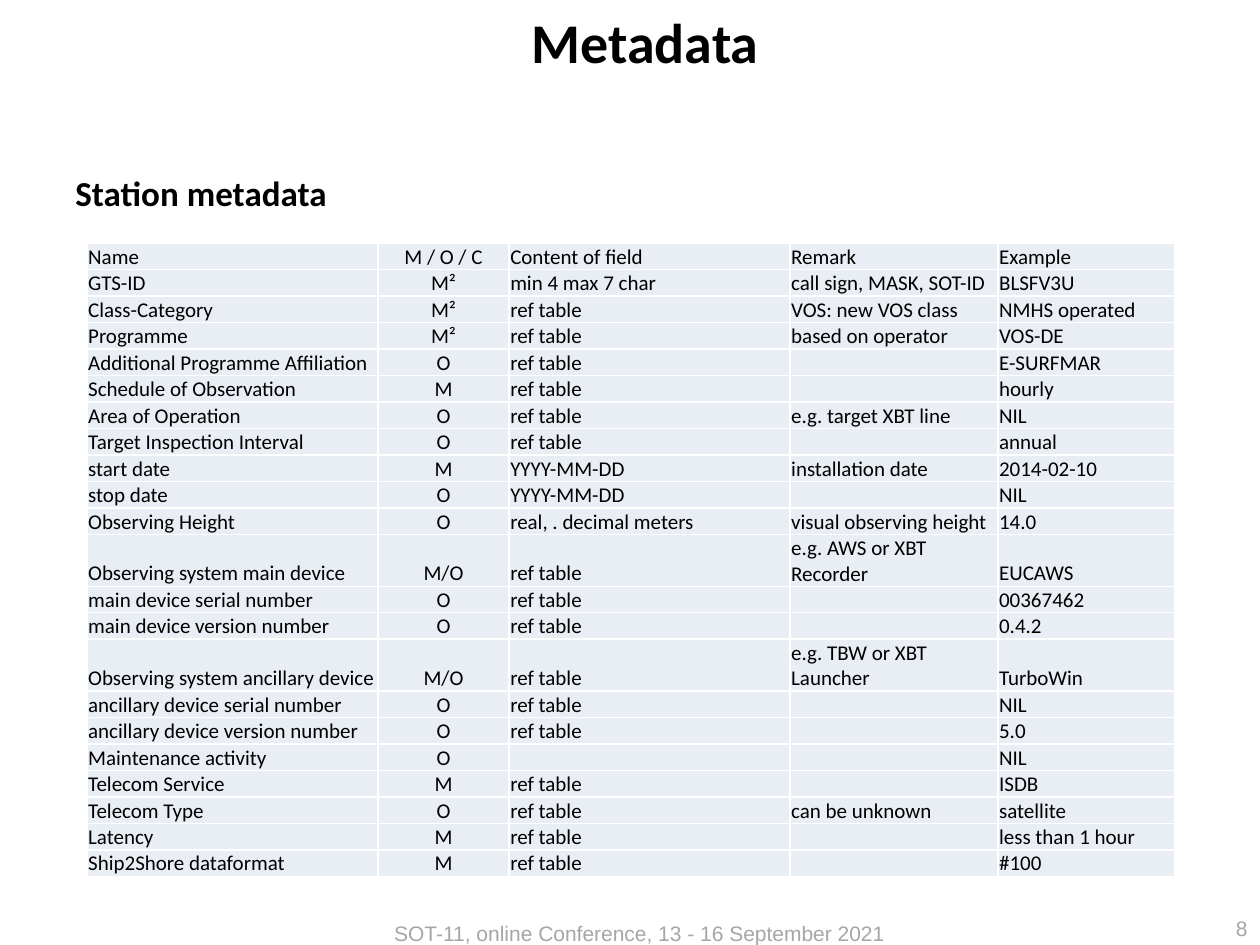
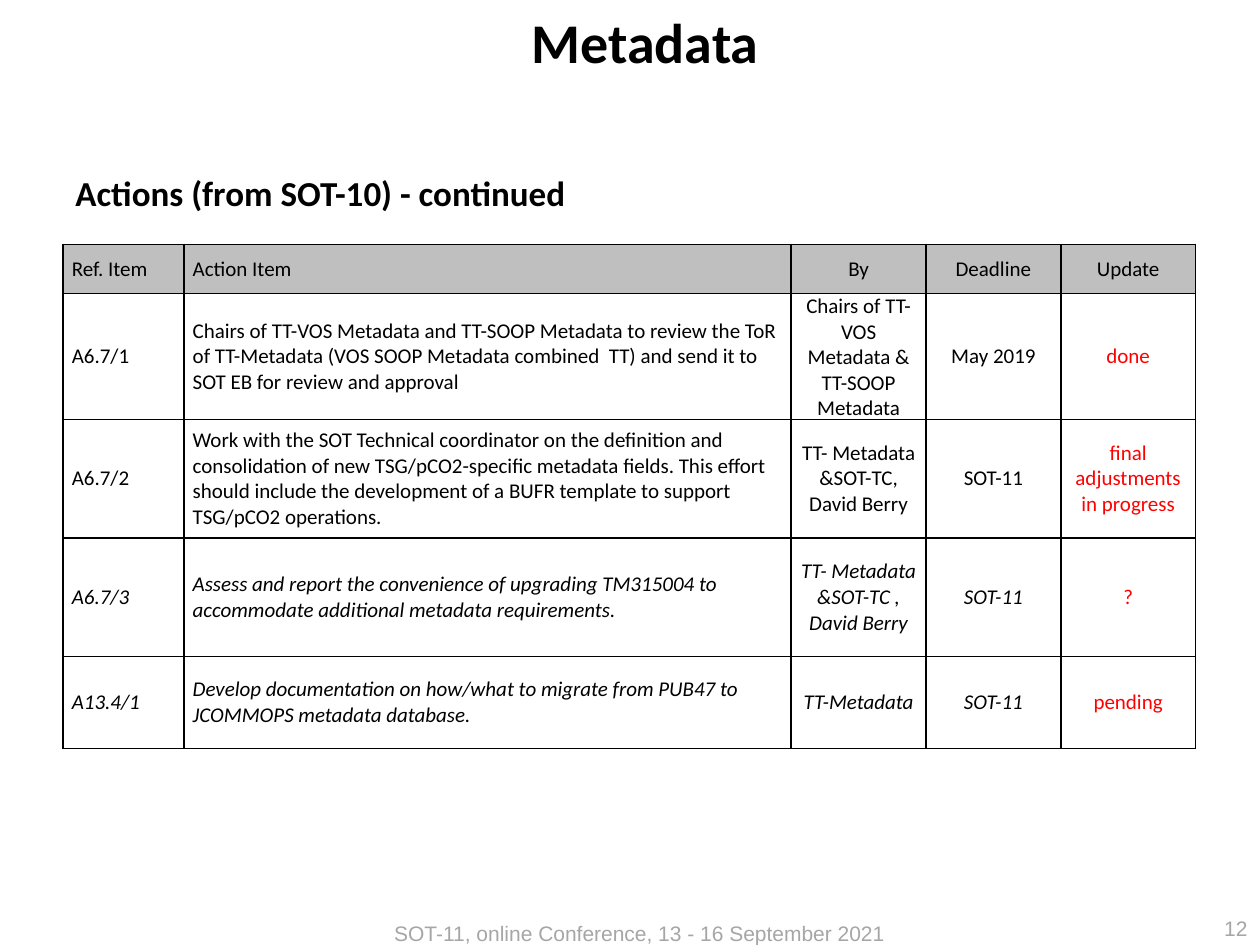
from dataclasses import dataclass

from lxml.etree import SubElement
from pptx import Presentation
from pptx.dml.color import RGBColor as RGB
from pptx.enum.text import MSO_ANCHOR as Anchor, MSO_AUTO_SIZE as Fit, PP_ALIGN as Align
from pptx.oxml.ns import qn
from pptx.util import Inches, Pt


@dataclass(frozen=True)
class Theme:
    ink: str = "000000"
    gray: str = "A6A6A6"
    red: str = "FF0000"
    pale: str = "E9EDF4"
    head: str = "BFBFBF"
    white: str = "FFFFFF"
    main: str = "Calibri"
    foot: str = "Arial"
    big: int = 32
    mid: int = 20
    small: int = 12


LOOK = Theme()
TITLE = "Metadata"
FOOTER = "SOT-11, online Conference, 13 - 16 September 2021"
SIDES = {"l": Align.LEFT, "c": Align.CENTER, "r": Align.RIGHT}

REF = "ref table"
STATION = [
    ("Name", "M / O / C", "Content of field", "Remark", "Example"),
    ("GTS-ID", "M²", "min 4 max 7 char", "call sign, MASK, SOT-ID", "BLSFV3U"),
    ("Class-Category", "M²", REF, "VOS: new VOS class", "NMHS operated"),
    ("Programme", "M²", REF, "based on operator", "VOS-DE"),
    ("Additional Programme Affiliation", "O", REF, "", "E-SURFMAR"),
    ("Schedule of Observation", "M", REF, "", "hourly"),
    ("Area of Operation", "O", REF, "e.g. target XBT line", "NIL"),
    ("Target Inspection Interval", "O", REF, "", "annual"),
    ("start date", "M", "YYYY-MM-DD", "installation date", "2014-02-10"),
    ("stop date", "O", "YYYY-MM-DD", "", "NIL"),
    ("Observing Height", "O", "real, . decimal meters", "visual observing height", "14.0"),
    ("Observing system main device", "M/O", REF, "e.g. AWS or XBT Recorder", "EUCAWS"),
    ("main device serial number", "O", REF, "", "00367462"),
    ("main device version number", "O", REF, "", "0.4.2"),
    ("Observing system ancillary device", "M/O", REF, "e.g. TBW or XBT Launcher", "TurboWin"),
    ("ancillary device serial number", "O", REF, "", "NIL"),
    ("ancillary device version number", "O", REF, "", "5.0"),
    ("Maintenance activity", "O", "", "", "NIL"),
    ("Telecom Service", "M", REF, "", "ISDB"),
    ("Telecom Type", "O", REF, "can be unknown", "satellite"),
    ("Latency", "M", REF, "", "less than 1 hour"),
    ("Ship2Shore dataformat", "M", REF, "", "#100"),
]
ACTIONS = [
    ("Ref. Item", "Action Item", "By", "Deadline", "Update"),
    ("A6.7/1",
     "Chairs of TT-VOS Metadata and TT-SOOP Metadata to review the ToR of TT-Metadata "
     "(VOS SOOP Metadata combined  TT) and send it to SOT EB for review and approval",
     "Chairs of TT-VOS Metadata & TT-SOOP Metadata", "May 2019", "done"),
    ("A6.7/2",
     "Work with the SOT Technical coordinator on the definition and consolidation of new "
     "TSG/pCO2-specific metadata fields. This effort should include the development of a "
     "BUFR template to support TSG/pCO2 operations.",
     "TT- Metadata &SOT-TC, David Berry", "SOT-11", "final adjustments in progress"),
    ("A6.7/3",
     "Assess and report the convenience of upgrading TM315004 to accommodate additional "
     "metadata requirements.",
     "TT- Metadata &SOT-TC , David Berry", "SOT-11", "?"),
    ("A13.4/1",
     "Develop documentation on how/what to migrate from PUB47 to JCOMMOPS metadata database.",
     "TT-Metadata", "SOT-11", "pending"),
]


def station_look(row, col):
    return LOOK.pale, {}


def action_look(row, col):
    """Gray header; red updates; the last two actions in italics."""
    if row == 0:
        return LOOK.head, {}
    if col == 4:
        return None, {"color": LOOK.red}
    return None, {"italic": row >= 3}


PAGES = [
    dict(number="8", heading="Station metadata", rows=STATION, at=(0.69, 1.93),
         cols=(2.31, 1.04, 2.23, 1.65, 1.4),
         tall=[0.39 if row[0].startswith("Observing system") else 0.21 for row in STATION],
         sides="lclll", anchor=Anchor.BOTTOM, inset=(0.01, 0.01, 0.01, 0),
         edge=LOOK.white, look=station_look),
    dict(number="12", heading="Actions (from SOT-10) - continued", rows=ACTIONS, at=(0.5, 1.94),
         cols=(0.96, 4.82, 1.07, 1.07, 1.07), tall=(0.39, 0.94, 0.94, 0.94, 0.73),
         sides="llccc", anchor=Anchor.MIDDLE, inset=(0.07, 0, 0.07, 0),
         edge=LOOK.ink, look=action_look),
]


def assign(item, values):
    for name, value in values.items():
        setattr(item, name, value)


def write(frame, text, side="l", color=LOOK.ink, **font):
    para = frame.paragraphs[0]
    para.alignment = SIDES[side]
    size = Pt(font.pop("size", LOOK.small))
    if not text:
        # An empty cell keeps its row low only if its end mark is small too.
        SubElement(para._p, qn("a:endParaRPr"), sz=str(int(size.pt * 100)))
        return
    run = para.add_run()
    run.text = text
    assign(run.font, {"name": LOOK.main, "size": size, **font})
    run.font.color.rgb = RGB.from_string(color)


def add_text(slide, box, text, anchor=Anchor.TOP, fit=Fit.NONE, **style):
    frame = slide.shapes.add_textbox(*map(Inches, box)).text_frame
    assign(frame, {"word_wrap": True, "auto_size": fit, "vertical_anchor": anchor})
    write(frame, text, **style)


def draw_edges(cell, color):
    props = cell._tc.get_or_add_tcPr()
    for side in "LRTB":
        line = SubElement(props, qn(f"a:ln{side}"), w=str(Pt(1)))
        fill = SubElement(line, qn("a:solidFill"))
        SubElement(fill, qn("a:srgbClr"), val=color)


def add_grid(slide, page):
    rows, cols, tall = page["rows"], page["cols"], page["tall"]
    box = (*page["at"], sum(cols), sum(tall))
    table = slide.shapes.add_table(len(rows), len(cols), *map(Inches, box)).table
    assign(table, {"first_row": False, "horz_banding": False})
    for col, width in zip(table.columns, cols):
        col.width = Inches(width)
    for row, height in zip(table.rows, tall):
        row.height = Inches(height)
    names = ("margin_left", "margin_top", "margin_right", "margin_bottom")
    space = dict(zip(names, map(Inches, page["inset"])))
    for r, texts in enumerate(rows):
        for c, text in enumerate(texts):
            cell = table.cell(r, c)
            assign(cell, {**space, "vertical_anchor": page["anchor"]})
            draw_edges(cell, page["edge"])
            fill, style = page["look"](r, c)
            if fill:
                cell.fill.solid()
                cell.fill.fore_color.rgb = RGB.from_string(fill)
            else:
                cell.fill.background()
            write(cell.text_frame, text, page["sides"][c], **style)


def add_page(deck, page):
    slide = deck.slides.add_slide(deck.slide_layouts[5])
    small = {"color": LOOK.gray, "name": LOOK.foot}
    add_text(slide, (3.03, 7.26, 4.88, 0.3), FOOTER, fit=Fit.SHAPE_TO_FIT_TEXT, **small)
    title = slide.shapes.title
    assign(title, dict(zip(("left", "top", "width", "height"),
                           map(Inches, (1.22, 0.01, 7.8, 0.98)))))
    assign(title.text_frame, {"vertical_anchor": Anchor.TOP, "auto_size": Fit.NONE})
    write(title.text_frame, TITLE, "c", size=LOOK.big, bold=True)
    add_text(slide, (7.75, 7.24, 2.25, 0.25), page["number"], Anchor.MIDDLE, side="r", **small)
    add_text(slide, (0.5, 1.31, 9, 5.39), page["heading"], size=LOOK.mid, bold=True)
    add_grid(slide, page)


def main():
    deck = Presentation()
    assign(deck, {"slide_width": Inches(10), "slide_height": Inches(7.5)})
    for page in PAGES:
        add_page(deck, page)
    deck.save("out.pptx")


if __name__ == "__main__":
    main()
